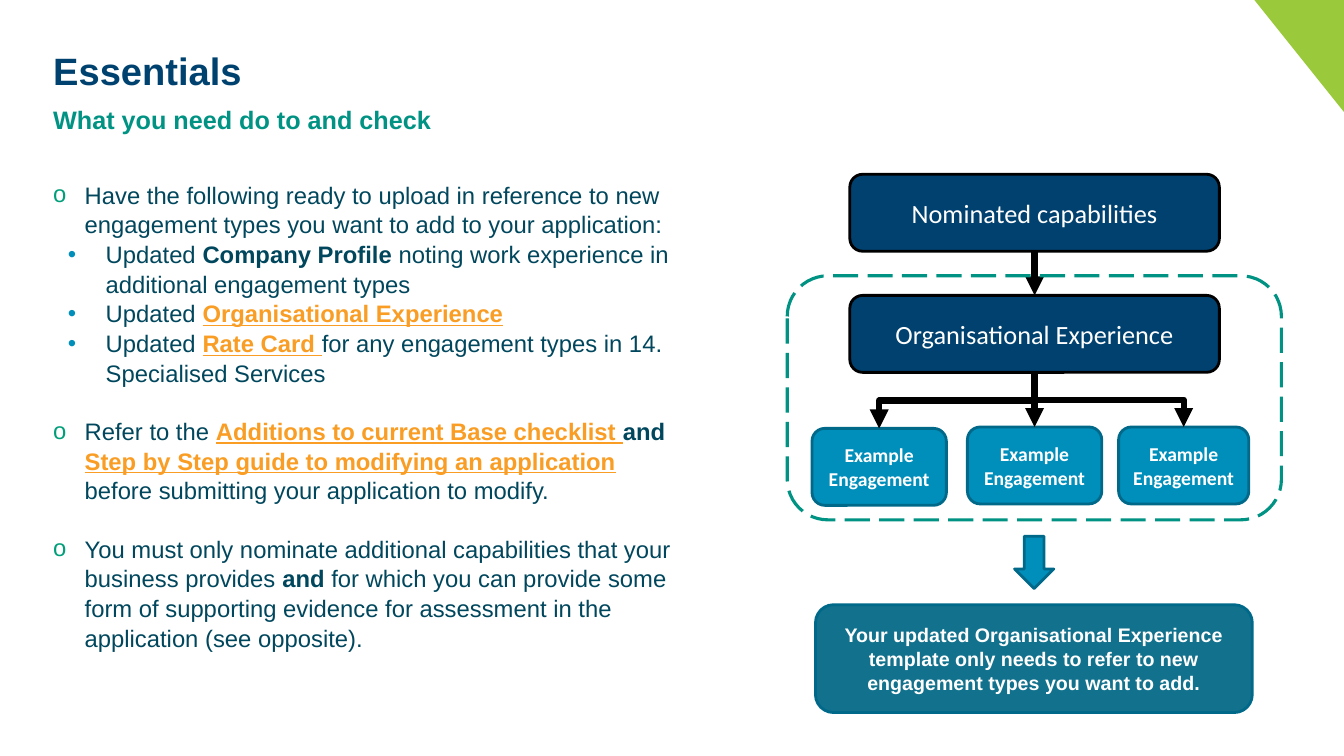
from lxml.etree import SubElement
from pptx import Presentation
from pptx.dml.color import RGBColor
from pptx.enum.dml import MSO_LINE
from pptx.enum.shapes import MSO_CONNECTOR, MSO_SHAPE
from pptx.enum.text import MSO_ANCHOR, PP_ALIGN
from pptx.oxml.ns import qn
from pptx.util import Pt

BLACK = RGBColor(0x00, 0x00, 0x00)
WHITE = RGBColor(0xFF, 0xFF, 0xFF)
LIME = RGBColor(0x9A, 0xCA, 0x3C)
NAVY = RGBColor(0x00, 0x42, 0x6F)
BOX_NAVY = RGBColor(0x00, 0x41, 0x6F)
GREEN = RGBColor(0x00, 0x93, 0x83)
BULLET_GREEN = RGBColor(0x00, 0x9F, 0x7A)
INK = RGBColor(0x00, 0x47, 0x5D)
ORANGE = RGBColor(0xF9, 0x9D, 0x24)
BLUE = RGBColor(0x00, 0x8E, 0xBA)
EDGE_BLUE = RGBColor(0x00, 0x69, 0x8A)
TEAL = RGBColor(0x12, 0x71, 0x8C)

PLAIN = {"bold": False, "color": INK}
BOLD = {"bold": True, "color": INK}
LINK = {"bold": True, "underline": True, "color": ORANGE}
OUTER = {"level": 0, "margin": 22.5, "hang": 22.5, "mark": "o", "mark_color": BULLET_GREEN}
INNER = {"level": 1, "margin": 37.5, "hang": 27, "mark": "•", "mark_color": BLUE}
LINE_GAP = 20.4

CHECKLIST = [
    (OUTER, 0, [("Have the following ready to upload in reference to new engagement "
                 "types you want to add to your application:", PLAIN)]),
    (INNER, 0, [("Updated ", PLAIN), ("Company Profile ", BOLD),
                ("noting work experience in additional engagement types", PLAIN)]),
    (INNER, 0, [("Updated ", PLAIN), ("Organisational Experience", LINK)]),
    (INNER, 0, [("Updated ", PLAIN), ("Rate Card ", LINK),
                ("for any engagement types in 14. Specialised Services", PLAIN)]),
    (OUTER, LINE_GAP, [("Refer to the ", PLAIN),
                       ("Additions to current Base checklist ", LINK), ("and ", BOLD),
                       ("Step by Step guide to modifying an application ", LINK),
                       ("before submitting your application to modify.", PLAIN)]),
    (OUTER, LINE_GAP, [("You must only nominate additional capabilities that your "
                        "business provides ", PLAIN), ("and ", BOLD),
                       ("for which you can provide some form of supporting evidence for "
                        "assessment in the application (see opposite).", PLAIN)]),
]


def style_font(font, style):
    """Apply a dict of format values to a font."""
    for key, value in style.items():
        if key == "color":
            font.color.rgb = value
        else:
            setattr(font, key, value)


def add_text_box(slide, place, insets):
    """Add a wrapping text box and return its text frame."""
    frame = slide.shapes.add_textbox(*map(Pt, place)).text_frame
    frame.word_wrap = True
    for side, inset in zip(("left", "top", "right", "bottom"), insets):
        setattr(frame, f"margin_{side}", Pt(inset))
    return frame


def add_heading(slide, text, place, size, color):
    """Add a bold one-line heading."""
    paragraph = add_text_box(slide, place, (0, 0, 0, 0)).paragraphs[0]
    run = paragraph.add_run()
    run.text = text
    style_font(run.font, {"name": "Arial", "size": Pt(size), "bold": True, "color": color})


def set_bullet(paragraph, kind):
    """Give a paragraph its level, hanging indent and bullet."""
    paragraph.level = kind["level"]
    properties = paragraph._p.get_or_add_pPr()
    properties.set("marL", str(Pt(kind["margin"])))
    properties.set("indent", str(-Pt(kind["hang"])))
    color = SubElement(properties, qn("a:buClr"))
    SubElement(color, qn("a:srgbClr"), val=str(kind["mark_color"]))
    SubElement(properties, qn("a:buFont"), typeface="Arial")
    SubElement(properties, qn("a:buChar"), char=kind["mark"])


def add_checklist(slide, items, place):
    """Add the bulleted list with mixed run formats."""
    frame = add_text_box(slide, place, (0, 3.6, 7.2, 3.6))
    for index, (kind, gap, pieces) in enumerate(items):
        paragraph = frame.add_paragraph() if index else frame.paragraphs[0]
        paragraph.line_spacing = 1.04
        paragraph.space_before = Pt(gap)
        set_bullet(paragraph, kind)
        for text, style in pieces:
            run = paragraph.add_run()
            run.text = text
            style_font(run.font, {"name": "Arial", "size": Pt(17), **style})


def add_block(slide, preset, place, fill, edge, width=2):
    """Add a preset shape, hollow when it has no fill colour."""
    block = slide.shapes.add_shape(preset, *map(Pt, place))
    block.shadow.inherit = False
    if fill is None:
        block.fill.background()
    else:
        block.fill.solid()
        block.fill.fore_color.rgb = fill
    block.line.color.rgb = edge
    block.line.width = Pt(width)
    return block


def add_box(slide, text, place, fill, edge, style):
    """Add a rounded box with centred white text."""
    box = add_block(slide, MSO_SHAPE.ROUNDED_RECTANGLE, place, fill, edge)
    frame = box.text_frame
    frame.word_wrap = True
    frame.vertical_anchor = MSO_ANCHOR.MIDDLE
    frame.text = text
    paragraph = frame.paragraphs[0]
    paragraph.alignment = PP_ALIGN.CENTER
    for run in paragraph.runs:
        style_font(run.font, {"color": WHITE, **style})
    return box


def finish_arrow(arrow):
    """Give a connector its black line, arrowhead and no shadow."""
    arrow.line.color.rgb = BLACK
    arrow.line.width = Pt(4.5)
    SubElement(arrow.line._get_or_add_ln(), qn("a:tailEnd"), type="triangle")
    SubElement(arrow._element.spPr, qn("a:effectLst"))


def add_straight_arrow(slide, upper, lower):
    """Join the bottom of one box to the top of another."""
    arrow = slide.shapes.add_connector(MSO_CONNECTOR.STRAIGHT, 0, 0, 0, 0)
    arrow.begin_connect(upper, 2)
    arrow.end_connect(lower, 0)
    finish_arrow(arrow)


def add_bent_arrow(slide, upper, lower):
    """Branch down, across and down by turning an elbow a quarter circle."""
    start_x, start_y = upper.left + upper.width // 2, upper.top + upper.height
    run = lower.left + lower.width // 2 - start_x
    drop = lower.top - start_y
    mid_x, mid_y = start_x + run // 2, start_y + drop // 2
    arrow = slide.shapes.add_connector(
        MSO_CONNECTOR.ELBOW, mid_x - drop // 2, mid_y + run // 2,
        mid_x + drop // 2, mid_y - run // 2)
    arrow._element.spPr.find(qn("a:xfrm")).set("rot", str(90 * 60000))
    finish_arrow(arrow)


def add_corner(slide):
    """Add the green triangle in the top right corner."""
    builder = slide.shapes.build_freeform(960, 0, scale=Pt(1))
    builder.add_line_segments([(896, 0), (960, 80.5)], close=True)
    corner = builder.convert_to_shape()
    corner.shadow.inherit = False
    corner.fill.solid()
    corner.fill.fore_color.rgb = LIME
    corner.line.fill.background()


def add_diagram(slide):
    """Add the flow from capabilities to the updated template."""
    stage_style = {"name": "Calibri", "size": Pt(18.8)}
    example_style = {"name": "Calibri", "size": Pt(14), "bold": True}
    capabilities, experience = [
        add_box(slide, text, (607, top, 264, 55), BOX_NAVY, BLACK, stage_style)
        for text, top in (("Nominated capabilities", 124.5),
                          ("Organisational Experience", 211))]
    left, middle, right = [
        add_box(slide, "Example\vEngagement", (x, y, width, 55), BLUE, EDGE_BLUE, example_style)
        for x, y, width in ((580, 306, 96), (691, 305, 96), (799, 305, 93))]
    add_straight_arrow(slide, capabilities, experience)
    add_bent_arrow(slide, experience, left)
    add_bent_arrow(slide, experience, right)
    add_straight_arrow(slide, experience, middle)
    scope = add_block(slide, MSO_SHAPE.ROUNDED_RECTANGLE, (562.3, 197, 353, 174.3),
                      None, GREEN, 2.25)
    scope.line.dash_style = MSO_LINE.LONG_DASH
    add_block(slide, MSO_SHAPE.DOWN_ARROW, (724.7, 383, 28, 37.4), BLUE, EDGE_BLUE)
    add_box(slide, "Your updated Organisational Experience template only needs to refer "
            "to new engagement types you want to add.", (582.5, 432, 312, 77), TEAL,
            EDGE_BLUE, {"name": "Arial", "size": Pt(14), "bold": True})


def main():
    """Build the Essentials slide and save it."""
    deck = Presentation()
    deck.slide_width, deck.slide_height = Pt(960), Pt(540)
    slide = deck.slides.add_slide(deck.slide_layouts[6])
    add_corner(slide)
    add_heading(slide, "Essentials", (38, 34, 589, 50), 27.2, NAVY)
    add_heading(slide, "What you need do to and check", (38, 74.5, 854, 22), 18, GREEN)
    add_checklist(slide, CHECKLIST, (38, 124.5, 456.5, 381.5))
    add_diagram(slide)
    deck.save("out.pptx")


if __name__ == "__main__":
    main()
